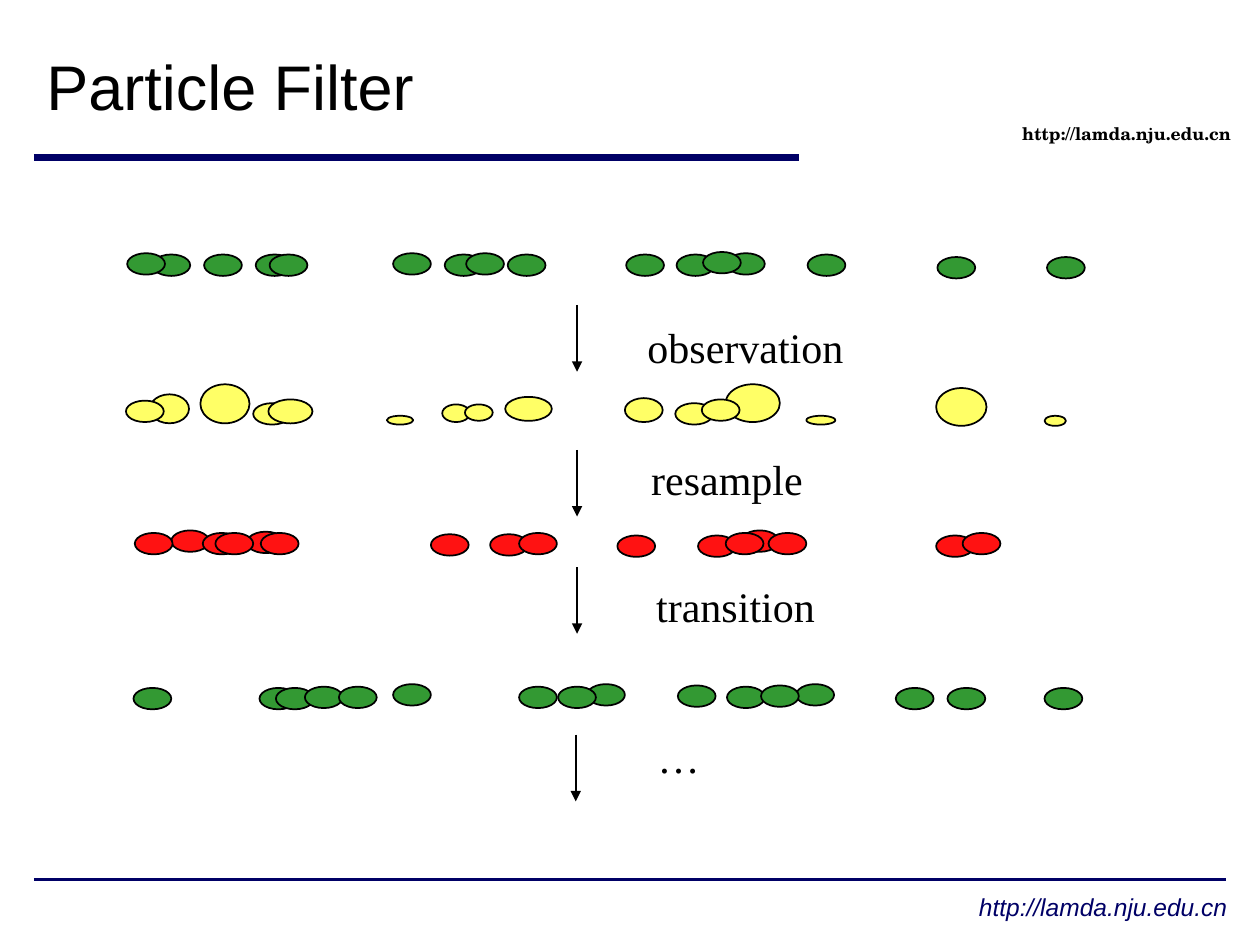
from typing import NamedTuple

from lxml import etree
from pptx import Presentation
from pptx.dml.color import RGBColor
from pptx.enum.shapes import MSO_CONNECTOR, MSO_SHAPE
from pptx.enum.text import MSO_ANCHOR, PP_ALIGN
from pptx.oxml.ns import qn
from pptx.util import Inches, Pt

STRAIGHT = MSO_CONNECTOR.STRAIGHT
ELLIPSE = MSO_SHAPE.OVAL
LEFT, CENTER, RIGHT = PP_ALIGN.LEFT, PP_ALIGN.CENTER, PP_ALIGN.RIGHT
TOP, MIDDLE = MSO_ANCHOR.TOP, MSO_ANCHOR.MIDDLE

# Grid of 1000 columns by 750 rows, in square cells
COLUMNS, ROWS = 1000, 750
CELL = Inches(0.01)

COLORS = {
    "background": "FFFFFF",
    "ink": "000000",
    "navy": "000066",
    "green": "339933",
    "yellow": "FFFF66",
    "red": "FF1212",
}


class Particle(NamedTuple):
    column: int
    row: int
    width: int = 30
    height: int = 17


class Generation(NamedTuple):
    color: str
    particles: list[Particle]


class Label(NamedTuple):
    text: str
    column: int
    row: int
    width: int
    height: int
    size: int
    font: str
    color: str = "ink"
    align: int = LEFT
    anchor: int = TOP
    bold: bool = False
    italic: bool = False


class Line(NamedTuple):
    start: tuple[int, int]
    end: tuple[int, int]
    weight: float
    color: str = "ink"
    arrow: bool = False


def equal_particles(*places: tuple[int, int]) -> list[Particle]:
    return [Particle(column, row) for column, row in places]


def step_label(text: str, column: int, row: int) -> Label:
    return Label(text, column, row, 192, 50, 24, "Times New Roman")


def step_arrow(column: int, row: int) -> Line:
    return Line((column, row), (column, row + 53), 1, arrow=True)


# Particles of each generation, from back to front
GENERATIONS = [
    Generation("green", equal_particles(
        (121, 202), (162, 202), (203, 202), (312, 201), (353, 202), (537, 202),
        (497, 202), (577, 201), (101, 201), (370, 201), (744, 204), (558, 200),
        (403, 202), (831, 204), (641, 202), (214, 202))),
    # Size shows the weight given by the observation
    Generation("yellow", [
        Particle(119, 313, 31, 23), Particle(159, 305, 39, 31),
        Particle(201, 320), Particle(307, 330, 21, 7),
        Particle(351, 321, 22, 14), Particle(536, 320),
        Particle(496, 316, 30, 19), Particle(576, 305, 43, 30),
        Particle(100, 318), Particle(369, 321, 22, 13),
        Particle(743, 308, 40, 30), Particle(557, 317),
        Particle(401, 315, 37, 19), Particle(829, 330, 17, 8),
        Particle(640, 330, 23, 7), Particle(213, 317, 35, 19)]),
    Generation("red", equal_particles(
        (136, 421), (161, 423), (196, 422), (207, 423), (389, 424), (554, 425),
        (490, 425), (588, 421), (107, 423), (342, 424), (743, 425), (576, 423),
        (412, 423), (764, 423), (610, 423), (171, 423))),
    Generation("green", equal_particles(
        (206, 546), (219, 546), (242, 545), (312, 543), (412, 545), (577, 545),
        (538, 544), (632, 543), (106, 546), (466, 543), (752, 546), (604, 544),
        (443, 545), (829, 546), (711, 546), (269, 545))),
]

RULES = [
    Line((27, 125), (634, 125), 4, "navy"),
    Line((27, 698), (973, 698), 2, "navy"),
]

ARROWS = [step_arrow(458, 242), step_arrow(458, 357),
          step_arrow(458, 450), step_arrow(457, 583)]

FRAME_LABELS = [
    Label("http://lamda.nju.edu.cn", 792, 93, 204, 34, 10, "TeX Gyre Schola",
          align=CENTER, bold=True),
    Label("http://lamda.nju.edu.cn", 625, 703, 359, 34, 14, "Arial", "navy",
          align=RIGHT, italic=True),
    Label("Particle Filter", 27, 28, 677, 80, 36, "Arial", anchor=MIDDLE),
]

STEP_LABELS = [
    step_label("observation", 504, 250),
    step_label("resample", 507, 355),
    step_label("transition", 511, 456),
    step_label("…", 512, 576),
]


def rgb(name: str) -> RGBColor:
    return RGBColor.from_string(COLORS[name])


def draw_line(slide, line: Line) -> None:
    connector = slide.shapes.add_connector(
        STRAIGHT, *(value * CELL for value in line.start + line.end))
    connector.line.color.rgb = rgb(line.color)
    connector.line.width = Pt(line.weight)
    if line.arrow:
        outline = connector.line._get_or_add_ln()
        etree.SubElement(outline, qn("a:tailEnd"), type="triangle")
    etree.SubElement(connector._element.spPr, qn("a:effectLst"))


def draw_particle(slide, particle: Particle, color: str) -> None:
    shape = slide.shapes.add_shape(
        ELLIPSE, *(value * CELL for value in particle))
    shape.shadow.inherit = False
    shape.fill.solid()
    shape.fill.fore_color.rgb = rgb(color)
    shape.line.color.rgb = rgb("ink")
    shape.line.width = Pt(1)


def draw_label(slide, label: Label) -> None:
    box = slide.shapes.add_textbox(
        label.column * CELL, label.row * CELL,
        label.width * CELL, label.height * CELL)
    frame = box.text_frame
    frame.word_wrap = True
    frame.vertical_anchor = label.anchor
    paragraph = frame.paragraphs[0]
    paragraph.alignment = label.align
    run = paragraph.add_run()
    run.text = label.text
    run.font.name = label.font
    run.font.size = Pt(label.size)
    run.font.bold = label.bold
    run.font.italic = label.italic
    run.font.color.rgb = rgb(label.color)


def main() -> None:
    presentation = Presentation()
    presentation.slide_width = COLUMNS * CELL
    presentation.slide_height = ROWS * CELL
    slide = presentation.slides.add_slide(presentation.slide_layouts[6])
    slide.background.fill.solid()
    slide.background.fill.fore_color.rgb = rgb("background")

    # Rules, title and addresses
    for rule in RULES:
        draw_line(slide, rule)
    for label in FRAME_LABELS:
        draw_label(slide, label)

    # Particle generations
    for generation in GENERATIONS:
        for particle in generation.particles:
            draw_particle(slide, particle, generation.color)

    # Steps between generations
    for arrow in ARROWS:
        draw_line(slide, arrow)
    for label in STEP_LABELS:
        draw_label(slide, label)

    presentation.save("out.pptx")


if __name__ == "__main__":
    main()
